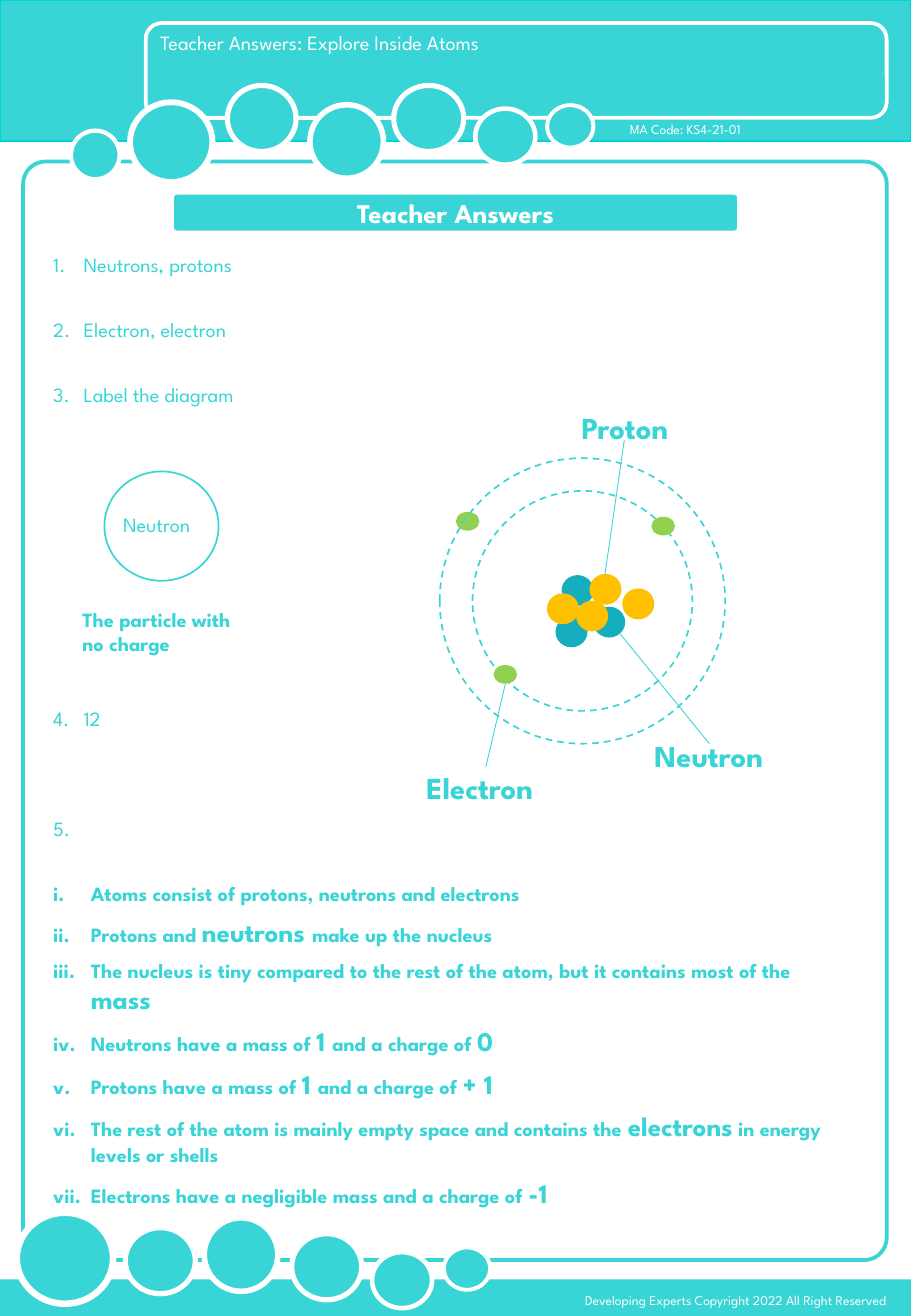
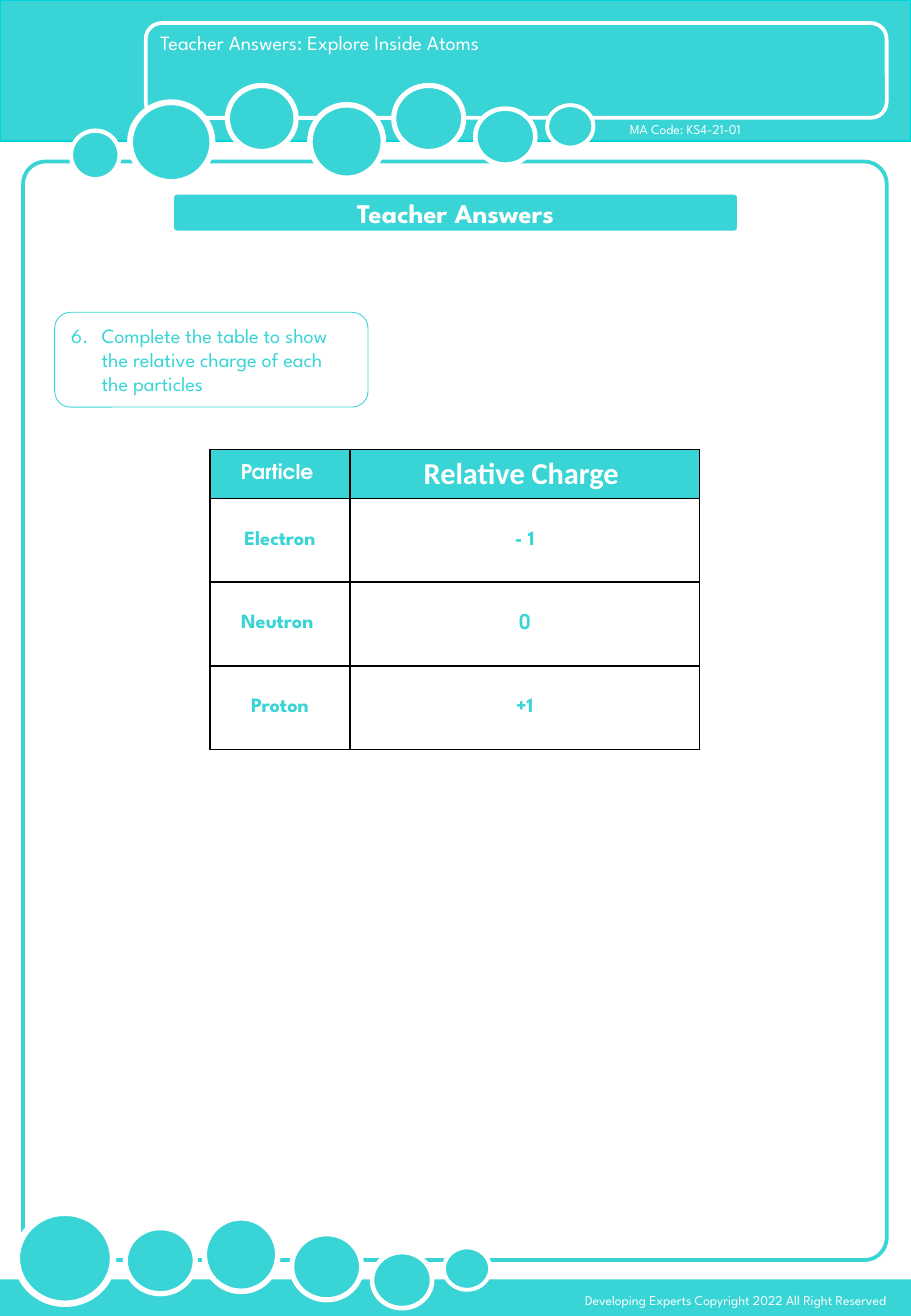
from dataclasses import dataclass
from lxml import etree
from pptx import Presentation
from pptx.dml.color import RGBColor
from pptx.enum.dml import MSO_LINE
from pptx.enum.shapes import MSO_CONNECTOR, MSO_SHAPE
from pptx.enum.text import MSO_ANCHOR, PP_ALIGN
from pptx.oxml.ns import qn
from pptx.util import Inches, Pt

RECT, ROUND = MSO_SHAPE.RECTANGLE, MSO_SHAPE.ROUNDED_RECTANGLE
OVAL, DONUT = MSO_SHAPE.OVAL, MSO_SHAPE.DONUT
DOT = MSO_SHAPE.FLOWCHART_CONNECTOR
LEFT, MID, RIGHT = PP_ALIGN.LEFT, PP_ALIGN.CENTER, PP_ALIGN.RIGHT
TOP, CENTER = MSO_ANCHOR.TOP, MSO_ANCHOR.MIDDLE
DASH = MSO_LINE.DASH
STRAIGHT = MSO_CONNECTOR.STRAIGHT


@dataclass(frozen=True)
class Theme:
    main: str = "38D4D6"
    edge: str = "00D4D6"
    white: str = "FFFFFF"
    black: str = "000000"
    teal: str = "16ADBF"
    green: str = "92D050"
    gold: str = "FFC000"
    font: str = "League Spartan"
    round: str = "TeX Gyre Adventor"
    plain: str = "Calibri"
    small: int = 8
    body: int = 12
    large: int = 16
    label: int = 18


T = Theme()

BUBBLES = [
    (0.59, 1.08, 0.39, 0.39), (1.08, 0.85, 0.66, 0.64),
    (1.88, 0.71, 0.55, 0.53), (2.56, 0.87, 0.59, 0.59),
    (3.25, 0.71, 0.56, 0.53), (3.92, 0.9, 0.48, 0.45),
    (4.51, 0.87, 0.37, 0.34),
    (0.15, 9.99, 0.77, 0.73), (1.04, 10.11, 0.56, 0.53),
    (1.69, 10.03, 0.59, 0.59), (2.41, 10.16, 0.56, 0.53),
    (3.07, 10.31, 0.48, 0.45), (3.66, 10.27, 0.37, 0.34),
]
FACTS = [
    "Atoms consist of protons, neutrons and electrons",
    "Protons and |neutrons |make up the nucleus",
    "The nucleus is tiny compared to the rest of the atom, "
    "but it contains most of the |mass",
    "Neutrons have a mass of |1 |and a charge of |0",
    "Protons have a mass of |1 |and a charge of |+ 1",
    "The rest of the atom is mainly empty space and contains the "
    "|electrons| in energy levels or shells",
    "Electrons have a negligible mass and a charge of |-1",
]
ROWS = [
    [("Particle ", T.round, T.body), ("Relative Charge ", T.plain, T.label)],
    [("Electron", T.font, T.body), ("- 1", T.font, T.body)],
    [("Neutron ", T.font, T.body), ("0", T.round, T.body)],
    [("Proton", T.font, T.body), ("+1", T.font, T.body)],
]


def rgb(color):
    return RGBColor.from_string(color)


def put(target, **values):
    for name, value in values.items():
        setattr(target, name, value)


def paint(fill, color):
    if color:
        fill.solid()
        fill.fore_color.rgb = rgb(color)
    else:
        fill.background()


def shape(slide, kind, box, fill=None, line=None, width=1, dash=None, adj=None):
    item = slide.shapes.add_shape(kind, *map(Inches, box))
    item.shadow.inherit = False
    paint(item.fill, fill)
    paint(item.line.fill, line)
    if line:
        item.line.width = Pt(width)
    if dash:
        item.line.dash_style = dash
    if adj is not None:
        item.adjustments[0] = adj
    return item


def rule(slide, start, end):
    line = slide.shapes.add_connector(STRAIGHT, *map(Inches, start + end))
    line.line.fill.solid()
    line.line.fill.fore_color.rgb = rgb(T.main)
    line.line.width = Pt(0.5)
    etree.SubElement(line._element.spPr, qn("a:effectLst"))


def add_par(frame, text, first, size=T.body, color=T.main, bold=False,
            align=LEFT, font=T.font):
    par = frame.paragraphs[0] if first else frame.add_paragraph()
    par.alignment = align
    for index, part in enumerate(text.split("|")):
        run = par.add_run()
        run.text = part
        put(run.font, name=font, bold=bold,
            size=Pt(T.large if index % 2 else size))
        run.font.color.rgb = rgb(color)
    return par


def write(frame, text, anchor=TOP, **style):
    put(frame, word_wrap=True, vertical_anchor=anchor)
    return add_par(frame, text, True, **style)


def label(slide, box, text, **style):
    item = slide.shapes.add_textbox(*map(Inches, box))
    write(item.text_frame, text, **style)


def number(par, kind="arabicPeriod", start=1, indent=0.25, after=24):
    props = par._p.get_or_add_pPr()
    margins = {"marL": Inches(indent), "indent": -Inches(indent)}
    for name, value in margins.items():
        props.set(name, str(value))
    mark = etree.SubElement(props, qn("a:buAutoNum"), type=kind)
    if start > 1:
        mark.set("startAt", str(start))
    par.space_after = Pt(after)


def bubble(slide, box):
    x, y, w, h = box
    shape(slide, OVAL, box, T.main, T.white)
    ring = (x - w * 0.04, y - h * 0.04, w * 1.08, h * 1.08)
    shape(slide, DONUT, ring, T.white, T.white, adj=0.05)


def frame_page(slide, w, h):
    shape(slide, RECT, (0, 0, w, 1.16), T.main, T.edge)
    shape(slide, RECT, (0, h - 0.3, w, 0.3), T.main)
    shape(slide, ROUND, (0.19, 1.33, 7.11, 9.04), line=T.main,
          width=2.25, adj=0.026)
    shape(slide, ROUND, (1.2, 0.19, 6.1, 0.78), line=T.white, width=2.25)
    for box in BUBBLES:
        bubble(slide, box)
    note = dict(size=T.small, color=T.white, align=RIGHT)
    label(slide, (4.18, 10.58, 3.22, 0.24),
          "Developing Experts Copyright 2022 All Right Reserved", **note)
    label(slide, (4.77, 0.95, 1.43, 0.24), "MA Code: KS4-21-01", **note)
    label(slide, (1.22, 0.2, 5.87, 0.3),
          "Teacher Answers: Explore Inside Atoms", color=T.white)
    banner = shape(slide, ROUND, (1.39, 1.56, 4.72, 0.38), T.main, T.white, 6)
    write(banner.text_frame, "Teacher Answers", CENTER, size=T.large,
          color=T.white, bold=True, align=MID)


def answers(slide, box):
    x, y, w, h = box
    head = slide.shapes.add_textbox(*map(Inches, (x, y, w, 1.5))).text_frame
    head.word_wrap = True
    for index, text in enumerate(
            ("Neutrons, protons", "Electron, electron", "Label the diagram")):
        number(add_par(head, text, index == 0))
    drop = 3.73
    tail = slide.shapes.add_textbox(
        *map(Inches, (x, y + drop, w, h - drop))).text_frame
    tail.word_wrap = True
    number(add_par(tail, "12", True), start=4, after=51)
    number(add_par(tail, " ", False), start=4)
    for text in FACTS:
        number(add_par(tail, text, False, bold=True), "romanLcPeriod",
               indent=0.31, after=6)


def particle(slide, x, y):
    ball = shape(slide, OVAL, (x + 0.28, y, 0.94, 0.9), line=T.main)
    put(ball.text_frame, margin_left=0, margin_right=Inches(0.08),
        margin_bottom=Inches(0.08))
    write(ball.text_frame, "Neutron", CENTER, align=MID)
    label(slide, (x, y + 1.07, 1.62, 0.5), "The particle with no charge",
          bold=True)


def atom(slide, x, y):
    def ring(size, fill=None):
        box = (x + 1.465 - size / 2, y + 1.625 - size / 2, size, size)
        shape(slide, OVAL, box, fill, T.main, dash=DASH)

    ring(1.81, T.white)
    sets = [
        (T.green, 0.18, 0.14, [(2.04, 0.94), (0.74, 2.16), (0.43, 0.9)]),
        (T.teal, 0.25, 0.24, [(1.56, 1.68), (1.3, 1.42), (1.25, 1.76)]),
        (T.gold, 0.25, 0.24,
         [(1.53, 1.41), (1.42, 1.63), (1.18, 1.57), (1.8, 1.53)]),
    ]
    for color, w, h, spots in sets:
        for left, top in spots:
            shape(slide, DOT, (x + left, y + top, w, h), color, color)
    ring(2.35)
    names = [
        ("Proton", (1.25, 0, 1.13, 0.4), MID, (1.65, 1.41), (1.81, 0.3)),
        ("Electron", (0, 2.96, 1.24, 0.4), MID, (0.83, 2.31), (0.67, 2.99)),
        ("Neutron", (1.96, 2.7, 1.24, 0.4), LEFT, (1.77, 1.89), (2.51, 2.8)),
    ]
    for text, (left, top, w, h), align, start, end in names:
        rule(slide, (x + start[0], y + start[1]), (x + end[0], y + end[1]))
        label(slide, (x + left, y + top, w, h), text, size=T.label,
              bold=True, align=align)


def border(cell):
    props = cell._tc.get_or_add_tcPr()
    for index, side in enumerate(("lnL", "lnR", "lnT", "lnB")):
        line = etree.Element(qn("a:" + side), w=str(Pt(1)))
        fill = etree.SubElement(line, qn("a:solidFill"))
        etree.SubElement(fill, qn("a:srgbClr"), val=T.black)
        props.insert(index, line)


def charges(slide, box):
    grid = slide.shapes.add_table(len(ROWS), 2, *map(Inches, box)).table
    for col, width in zip(grid.columns, (1.15, 2.88)):
        col.width = Inches(width)
    for r, items in enumerate(ROWS):
        grid.rows[r].height = Inches(0.69 if r else 0.37)
        for c, (text, font, size) in enumerate(items):
            cell = grid.cell(r, c)
            paint(cell.fill, T.white if r else T.main)
            border(cell)
            cell.vertical_anchor = CENTER
            add_par(cell.text_frame, text, True, size=size, font=font,
                    color=T.main if r else T.white, bold=True, align=MID)


def task(slide, box):
    card = shape(slide, ROUND, box, line=T.main, width=0.5)
    par = write(card.text_frame, "Complete the table to show the relative "
                "charge of each the particles")
    number(par, start=6, after=0)


def main():
    deck = Presentation()
    w, h = 7.5, 10.83
    put(deck, slide_width=Inches(w), slide_height=Inches(h))
    first, second = (deck.slides.add_slide(deck.slide_layouts[6])
                     for _ in range(2))
    for slide in (first, second):
        frame_page(slide, w, h)
    answers(first, (0.34, 2.03, 6.63, 8.1))
    particle(first, 0.58, 3.88)
    atom(first, 3.33, 3.32)
    charges(second, (1.73, 3.7, 4.03, 2.44))
    task(second, (0.45, 2.57, 2.58, 0.78))
    deck.save("out.pptx")


if __name__ == "__main__":
    main()
